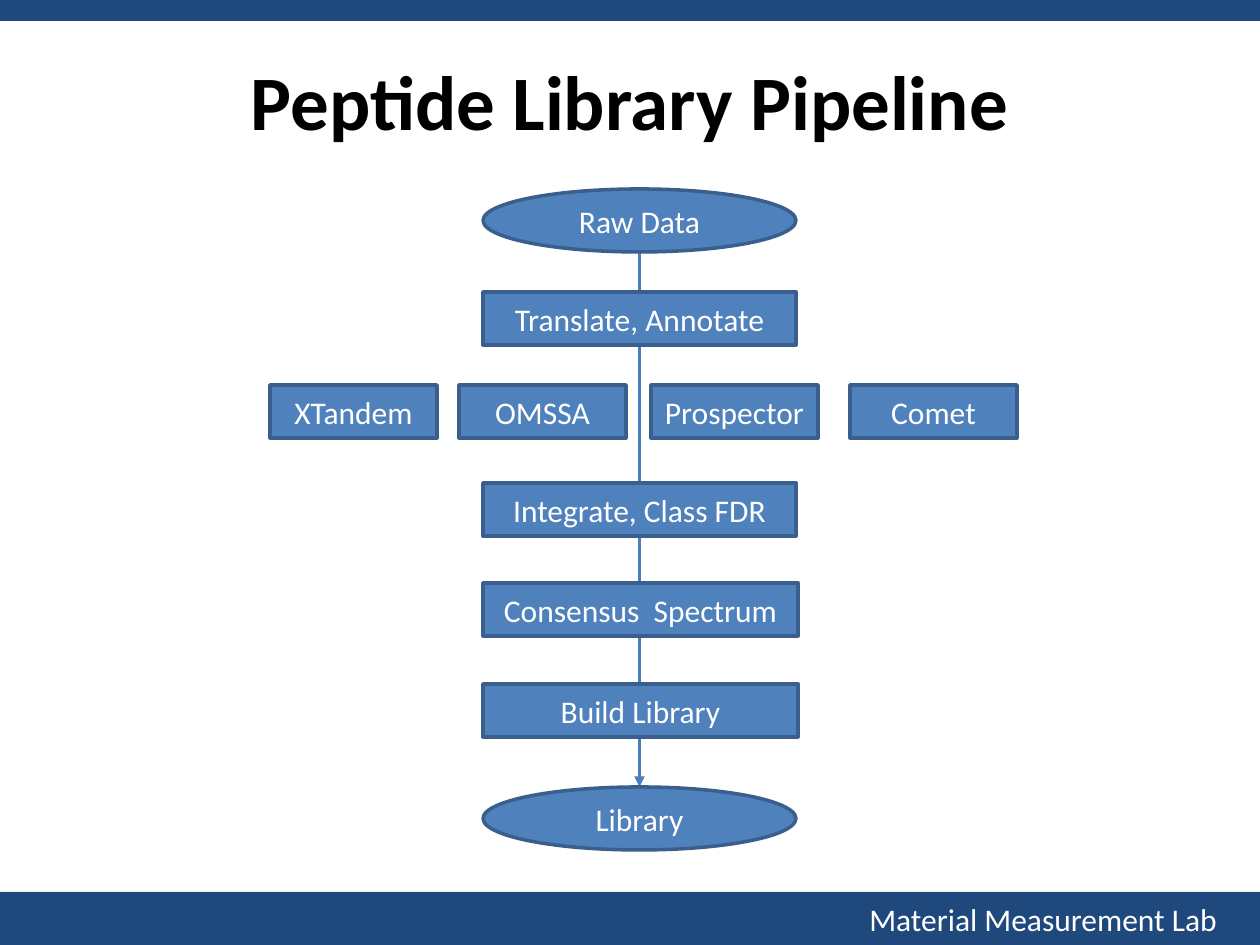
"""Build the peptide library pipeline slide."""
from dataclasses import dataclass

from lxml.etree import SubElement
from pptx import Presentation
from pptx.dml.color import RGBColor
from pptx.enum.shapes import MSO_CONNECTOR as Connector, MSO_SHAPE as Preset
from pptx.enum.text import MSO_ANCHOR as Anchor, PP_ALIGN as Align
from pptx.oxml.ns import qn
from pptx.util import Emu, Pt

COLORS = {
    "band": "1F497D",
    "fill": "4F81BD",
    "border": "3A5F8C",
    "flow": "4B7EBC",
    "title": "000000",
    "label": "FFFFFF",
}
FONT = "Calibri"
WIDTH, HEIGHT = 1260, 945
STEP_LEFT, STEP_WIDTH = 483, 313
STEP_HEIGHT, END_HEIGHT = 53, 63
TOOL_TOP, TOOL_WIDTH = 385, 167


@dataclass
class Node:
    label: str
    left: int
    top: int
    width: int = STEP_WIDTH
    height: int = STEP_HEIGHT
    preset: Preset = Preset.RECTANGLE


RAW_DATA = Node("Raw Data", STEP_LEFT, 189, height=END_HEIGHT, preset=Preset.OVAL)
LIBRARY = Node("Library", STEP_LEFT, 787, height=END_HEIGHT, preset=Preset.OVAL)
STEPS = [
    Node("Translate, Annotate", STEP_LEFT, 292),
    Node("Integrate, Class FDR", STEP_LEFT, 483),
    Node("Consensus  Spectrum", STEP_LEFT, 583, 315),
    Node("Build Library", STEP_LEFT, 684, 315),
]
TOOLS = [
    Node(label, left, TOOL_TOP, TOOL_WIDTH)
    for label, left in [("XTandem", 270), ("OMSSA", 459), ("Prospector", 651), ("Comet", 850)]
]


def px(length: int) -> Emu:
    """Turn slide pixels into EMU."""
    return Emu(round(length * 914400 / 126))


def color(name: str) -> RGBColor:
    """Look up a named colour."""
    return RGBColor.from_string(COLORS[name])


def write(shape, text: str, *, size=18, tint="label", bold=False, align=Align.CENTER) -> None:
    """Put one formatted paragraph into a shape."""
    frame = shape.text_frame
    frame.word_wrap = True
    frame.vertical_anchor = Anchor.MIDDLE
    paragraph = frame.paragraphs[0]
    paragraph.alignment = align
    run = paragraph.add_run()
    run.text = text
    run.font.name = FONT
    run.font.size = Pt(size)
    run.font.bold = bold
    run.font.color.rgb = color(tint)


def add_filled(slide, node: Node, fill: str):
    """Add a flat borderless shape at the node's place."""
    shape = slide.shapes.add_shape(
        node.preset, px(node.left), px(node.top), px(node.width), px(node.height)
    )
    shape.shadow.inherit = False
    shape.fill.solid()
    shape.fill.fore_color.rgb = color(fill)
    shape.line.fill.background()
    return shape


def add_node(slide, node: Node):
    """Add an outlined and labelled flowchart node."""
    shape = add_filled(slide, node, "fill")
    shape.line.color.rgb = color("border")
    shape.line.width = Pt(2)
    write(shape, node.label)
    return shape


def add_flow(slide, start: Node, end: Node):
    """Add the arrow from one node's bottom to another's top."""
    center = px(start.left) + px(start.width) // 2
    connector = slide.shapes.add_connector(
        Connector.STRAIGHT, center, px(start.top + start.height), center, px(end.top)
    )
    connector.line.color.rgb = color("flow")
    connector.line.width = Pt(2)
    SubElement(connector.line._get_or_add_ln(), qn("a:tailEnd"), type="triangle")
    SubElement(connector._element.spPr, qn("a:effectLst"))
    return connector


def add_title(slide, text: str) -> None:
    """Place and format the title placeholder."""
    title = slide.shapes.title
    title.left, title.top, title.width, title.height = px(63), px(21), px(1134), px(158)
    write(title, text, size=44, tint="title", bold=True)


def main() -> None:
    """Draw the slide and save it."""
    presentation = Presentation()
    presentation.slide_width, presentation.slide_height = px(WIDTH), px(HEIGHT)
    slide = presentation.slides.add_slide(presentation.slide_layouts[5])

    add_title(slide, "Peptide Library Pipeline")
    add_filled(slide, Node("", 0, 0, WIDTH, 21), "band")
    footer = add_filled(slide, Node("", 0, 892, WIDTH, HEIGHT - 892), "band")
    footer.text_frame.margin_right = px(43)
    write(footer, "Material Measurement Lab", align=Align.RIGHT)

    flow = add_flow(slide, RAW_DATA, LIBRARY)
    for node in [RAW_DATA, *STEPS, *TOOLS]:
        add_node(slide, node)
    flow.end_connect(add_node(slide, LIBRARY), 0)

    presentation.save("out.pptx")


if __name__ == "__main__":
    main()
